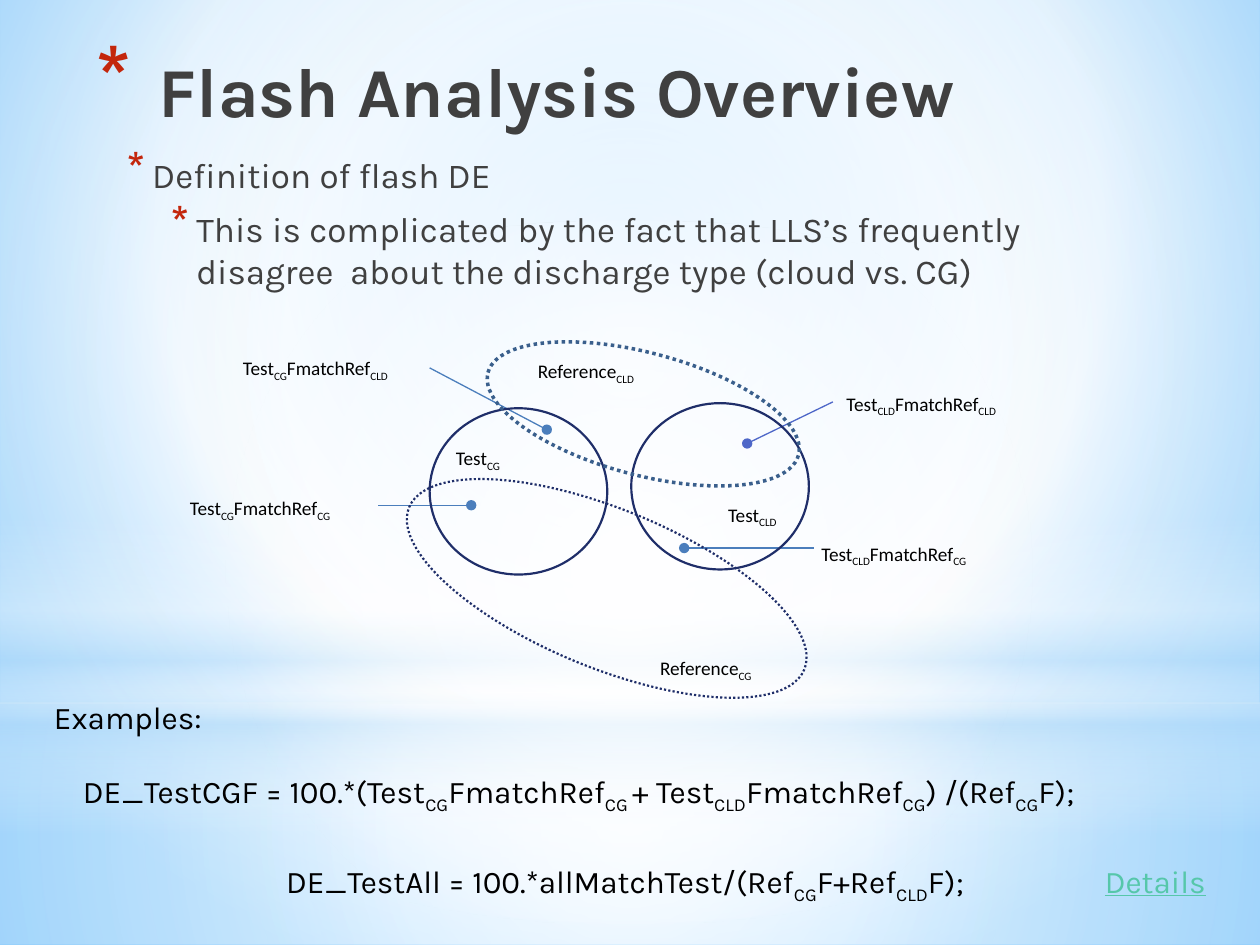
from lxml import etree
from pptx import Presentation
from pptx.dml.color import RGBColor
from pptx.enum.dml import MSO_LINE
from pptx.enum.shapes import MSO_CONNECTOR, MSO_SHAPE
from pptx.enum.text import PP_ALIGN
from pptx.oxml import parse_xml
from pptx.oxml.ns import nsdecls, qn
from pptx.util import Inches, Pt

COLORS = {
    "white": "FFFFFF", "haze": "B4DCFA", "sky": "9ED5FF", "edge": "5BB9FF",
    "text": "404040", "black": "000000", "bullet": "C3260C", "link": "56C7AA",
    "navy": "1F2E69", "steel": "3A5F8C", "leader": "4B7EBC", "accent": "4E67C8",
}
CENTER = (50, 50, 50, 50)


def rgb(name):
    return RGBColor.from_string(COLORS[name])


def gradient(stops, focus=None):
    """Radial gradient towards focus, or a vertical one without it."""
    stop_xml = "".join(
        f'<a:gs pos="{pos * 1000}"><a:srgbClr val="{COLORS[color]}">'
        f'<a:alpha val="{alpha * 1000}"/></a:srgbClr></a:gs>'
        for pos, color, alpha in stops)
    if focus:
        sides = " ".join(f'{side}="{value * 1000}"' for side, value in zip("ltrb", focus))
        course = f'<a:path path="circle"><a:fillToRect {sides}/></a:path>'
    else:
        course = '<a:lin ang="5400000" scaled="0"/>'
    return parse_xml(f'<a:gradFill {nsdecls("a")} rotWithShape="1">'
                     f'<a:gsLst>{stop_xml}</a:gsLst>{course}</a:gradFill>')


class SlideBuilder:
    font = "Karla"
    label_font = "Calibri"

    def __init__(self, slide):
        self.slide = slide
        self.shapes = slide.shapes

    def background(self, stops, focus):
        self.slide.background.fill.solid()
        props = self.slide.element.find(".//" + qn("p:bgPr"))
        props.replace(props.find(qn("a:solidFill")), gradient(stops, focus))

    def glow(self, kind, box, stops, focus=None):
        shape = self.shapes.add_shape(kind, *map(Inches, box))
        shape.shadow.inherit = False
        shape.line.fill.background()
        shape.fill.solid()
        props = shape.element.spPr
        props.replace(props.find(qn("a:solidFill")), gradient(stops, focus))

    def outline(self, box, color, width, angle=0, dash=None):
        ellipse = self.shapes.add_shape(MSO_SHAPE.OVAL, *map(Inches, box))
        ellipse.shadow.inherit = False
        ellipse.rotation = angle
        ellipse.fill.background()
        ellipse.line.color.rgb = rgb(color)
        ellipse.line.width = Pt(width)
        if dash:
            ellipse.line.dash_style = dash

    def leader(self, start, end, color):
        line = self.shapes.add_connector(MSO_CONNECTOR.STRAIGHT, *map(Inches, start + end))
        line.line.color.rgb = rgb(color)
        line.line.width = Pt(0.75)
        props = line.element.spPr
        etree.SubElement(props.find(qn("a:ln")), qn("a:headEnd"), type="oval")
        etree.SubElement(props, qn("a:effectLst"))

    def frame(self, box):
        frame = self.shapes.add_textbox(*map(Inches, box)).text_frame
        frame.word_wrap = True
        return frame

    def style(self, run, size, color, font=None, bold=False):
        run.font.name = font or self.font
        run.font.size = Pt(size)
        run.font.bold = bold
        run.font.color.rgb = rgb(color)

    def bullets(self, box, items, size, bullet_size, bold=False):
        """Items are (text, left margin, hanging indent)."""
        frame = self.frame(box)
        frame.text = "\n".join(text for text, _, _ in items)
        for paragraph, (_, margin, hang) in zip(frame.paragraphs, items):
            self.style(paragraph.runs[0], size, "text", bold=bold)
            paragraph.space_before = Pt(size * 0.2)
            paragraph.space_after = Pt(3)
            props = paragraph._p.get_or_add_pPr()
            props.set("marL", str(Inches(margin)))
            props.set("indent", str(-Inches(hang)))
            color = etree.SubElement(props, qn("a:buClr"))
            etree.SubElement(color, qn("a:srgbClr"), val=COLORS["bullet"])
            etree.SubElement(props, qn("a:buSzPct"), val=str(bullet_size * 1000))
            etree.SubElement(props, qn("a:buChar"), char="*")

    def formula(self, box, text, size=18, color="black", font=None, align=PP_ALIGN.LEFT):
        """Every second part between bars is a subscript."""
        paragraph = self.frame(box).paragraphs[0]
        paragraph.alignment = align
        for index, part in enumerate(text.split("|")):
            run = paragraph.add_run()
            run.text = part
            self.style(run, size, color, font)
            if index % 2:
                run.font._element.set("baseline", "-25000")
        return paragraph

    def label(self, left, top, width, text):
        paragraph = self.formula((left, top, width, 0.29), text, 11, font=self.label_font)
        paragraph.line_spacing = 1.15
        paragraph.space_after = Pt(10)


def main():
    deck = Presentation()
    deck.slide_width, deck.slide_height = Inches(10), Inches(7.5)
    page = SlideBuilder(deck.slides.add_slide(deck.slide_layouts[6]))

    # Sky backdrop
    page.background([(0, "sky", 100), (60, "white", 100), (100, "edge", 100)],
                    (20, 10, 20, 60))
    page.glow(MSO_SHAPE.RECTANGLE, (0, 5.58, 10, 1.92),
              [(0, "white", 91), (37, "white", 76), (100, "haze", 79)], CENTER)
    page.glow(MSO_SHAPE.RECTANGLE, (0, 0, 10, 5.58),
              [(0, "white", 89), (48, "white", 62), (100, "haze", 79)], CENTER)
    page.glow(MSO_SHAPE.RECTANGLE, (0, 4.12, 10, 2.5),
              [(0, "white", 0), (29, "white", 30), (45, "haze", 40),
               (55, "white", 26), (65, "haze", 60), (100, "white", 0)])
    page.glow(MSO_SHAPE.OVAL, (0, 1.75, 10, 5.58),
              [(0, "white", 100), (56, "white", 0)], CENTER)

    # Title and definition
    page.bullets((0.67, 0.33, 8.42, 1), [(" Flash Analysis Overview", 0.35, 0.35)],
                 40, 128, bold=True)
    page.bullets((0.86, 1.17, 7.92, 1.5), [
        ("Definition of flash DE", 0.25, 0.2),
        ("This is complicated by the fact that LLS’s frequently disagree  about "
         "the discharge type (cloud vs. CG)", 0.6, 0.2),
    ], 20, 130)

    # Leaders from the overlaps to their labels
    for start, end, color in [
        ((5.93, 3.52), (6.61, 3.19), "accent"),
        ((4.34, 3.41), (3.41, 2.92), "leader"),
        ((3.74, 4.01), (3, 4.01), "leader"),
        ((5.43, 4.35), (6.46, 4.35), "leader"),
    ]:
        page.leader(start, end, color)

    # Test circles and dotted reference ellipses
    for left, top in [(3.41, 3.24), (5.01, 3.2)]:
        page.outline((left, top, 1.41, 1.32), "navy", 1.25)
    page.outline((3.12, 4.04, 3.39, 1.26), "navy", 1.25, 22.3, MSO_LINE.ROUND_DOT)
    page.outline((3.83, 2.8, 2.55, 0.97), "steel", 2, 14.9, MSO_LINE.ROUND_DOT)

    # Diagram labels
    for left, top, width, text in [
        (5.68, 3.91, 0.77, "Test|CLD"),
        (3.52, 3.46, 1.11, "Test|CG"),
        (4.17, 2.77, 1.25, "Reference|CLD"),
        (5.14, 5.13, 1.11, "Reference|CG"),
        (6.42, 4.22, 1.65, "Test|CLD|FmatchRef|CG"),
        (1.41, 3.86, 1.6, "Test|CG|FmatchRef|CG"),
        (6.62, 3.03, 1.76, "Test|CLD|FmatchRef|CLD"),
        (1.83, 2.75, 1.51, "Test|CG|FmatchRef|CLD"),
    ]:
        page.label(left, top, width, text)

    # Example formulas
    page.formula((0.5, 6.08, 9, 0.4),
                 " DE_TestCGF = 100.*(Test|CG|FmatchRef|CG |+ Test|CLD|FmatchRef|CG|"
                 ") /(Ref|CG|F);")
    page.formula((0.5, 6.79, 8.92, 0.4),
                 "DE_TestAll = 100.*allMatchTest/(Ref|CG|F+Ref|CLD|F);",
                 align=PP_ALIGN.CENTER)
    page.formula((0.33, 5.49, 1.5, 0.4), "Examples:")
    details = page.formula((8.67, 6.79, 1.17, 0.4), "Details", color="link")
    details.runs[0].font.underline = True

    deck.save("out.pptx")


if __name__ == "__main__":
    main()
